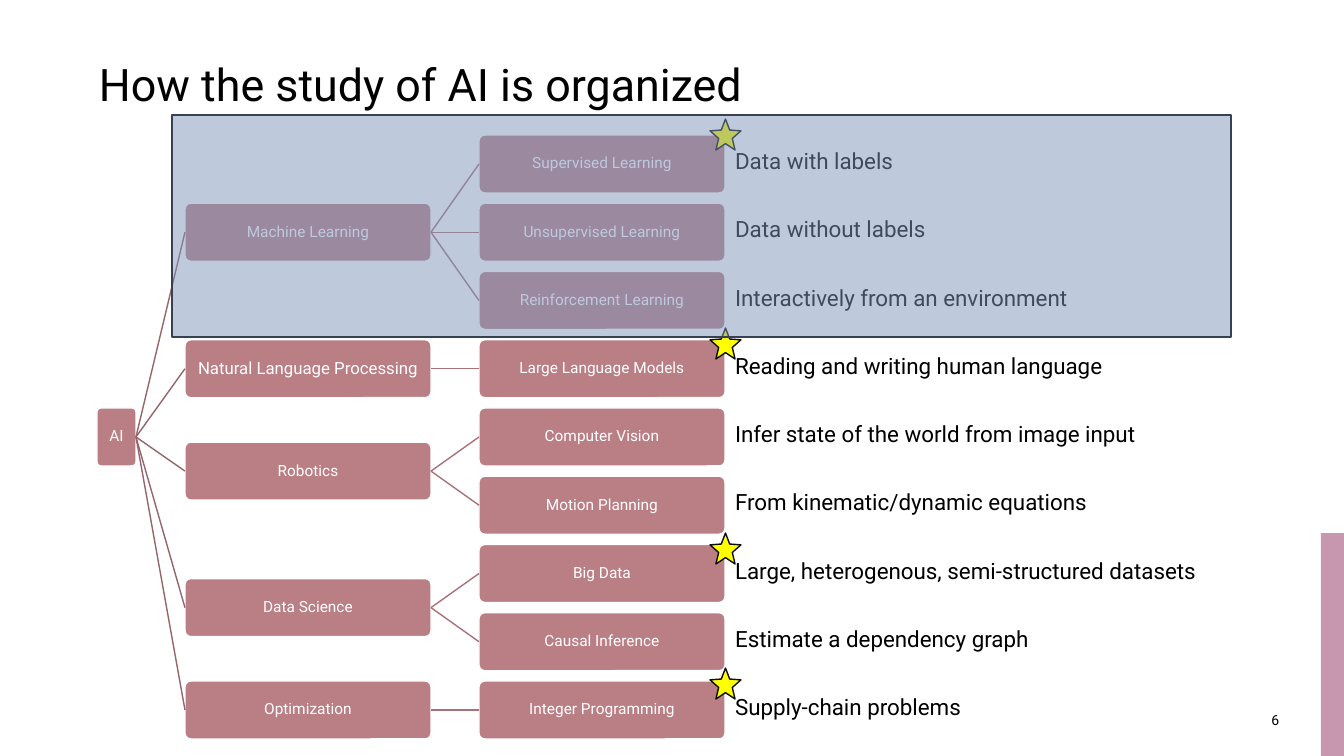
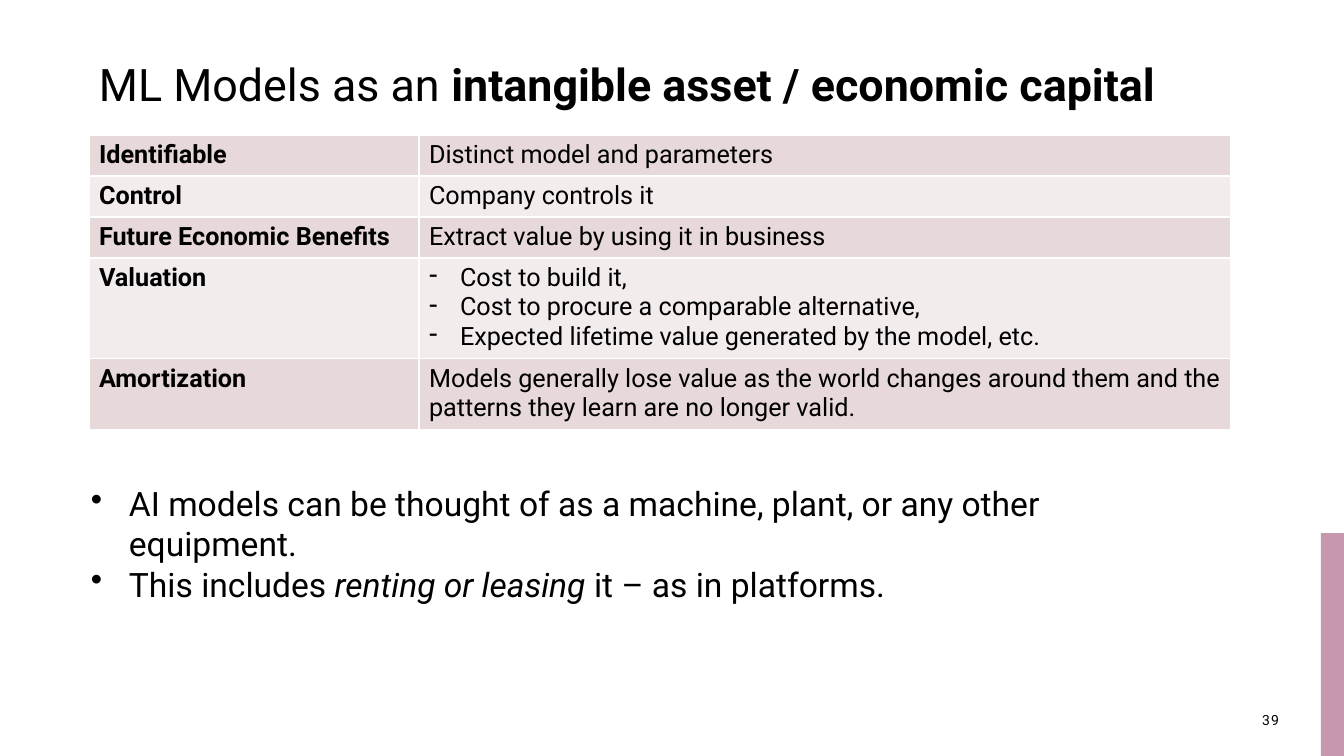
import pptx
import pptx.util
import pptx.dml.color
import pptx.enum.shapes
import pptx.enum.text
import pptx.oxml
import pptx.oxml.ns

Pt = pptx.util.Pt
RGBColor = pptx.dml.color.RGBColor
SHAPE = pptx.enum.shapes.MSO_SHAPE
ANCHOR = pptx.enum.text.MSO_ANCHOR
ALIGN = pptx.enum.text.PP_ALIGN
qn = pptx.oxml.ns.qn

BLACK = RGBColor(0x00, 0x00, 0x00)
WHITE = RGBColor(0xFF, 0xFF, 0xFF)
BAND = RGBColor(0xC7, 0x96, 0xAF)
NODE = RGBColor(0xBA, 0x7E, 0x85)
ROOT_EDGE = RGBColor(0x95, 0x65, 0x6B)
BRANCH_EDGE = RGBColor(0xA9, 0x72, 0x79)
STAR = RGBColor(0xFF, 0xFF, 0x00)
STAR_LINE = RGBColor(0x0D, 0x0D, 0x0D)
VEIL = RGBColor(0x7E, 0x94, 0xBA)
VEIL_LINE = RGBColor(0x37, 0x41, 0x52)
ROW_FILLS = [RGBColor(0xE7, 0xD8, 0xD9), RGBColor(0xF3, 0xEC, 0xED)]

FONT = "Roboto"
PX = 914400 / 100.8
PLAIN_TABLE = "{2D5ABB26-0587-4C30-8999-92F81FD0307C}"
BOLD = {"bold": True}
ITALIC = {"italic": True}

TREE = [
    ("Machine Learning", 11, [
        ("Supervised Learning", "Data with labels"),
        ("Unsupervised Learning", "Data without labels"),
        ("Reinforcement Learning", "Interactively from an environment"),
    ]),
    ("Natural Language Processing", 12, [
        ("Large Language Models", "Reading and writing human language"),
    ]),
    ("Robotics", 11, [
        ("Computer Vision", "Infer state of the world from image input"),
        ("Motion Planning", "From kinematic/dynamic equations"),
    ]),
    ("Data Science", 11, [
        ("Big Data", "Large, heterogenous, semi-structured datasets"),
        ("Causal Inference", "Estimate a dependency graph"),
    ]),
    ("Optimization", 11, [
        ("Integer Programming", "Supply-chain problems"),
    ]),
]
ROOT_X, ROOT_W = 97, 39
BRANCH_X, LEAF_X, NODE_W, NODE_H = 185, 479, 246, 58
FIRST_ROW, LAST_ROW = 164, 710
STAR_X, STAR_SIZE = 710, 31
STAR_TOPS = [119, 328, 533, 668]

ASSET_COLUMNS = [330, 812]
ASSET_ROWS = [
    ("Identifiable", ["Distinct model and parameters"], 41),
    ("Control", ["Company controls it"], 41),
    ("Future Economic Benefits", ["Extract value by using it in business"], 41),
    ("Valuation", [
        "Cost to build it,",
        "Cost to procure a comparable alternative,",
        "Expected lifetime value generated by the model, etc.",
    ], 98),
    ("Amortization", [
        "Models generally lose value as the world changes around them and the "
        "patterns they learn are no longer valid.",
    ], 70),
]
POINTS = [
    [("AI models can be thought of as a machine, plant, or any other equipment.", {})],
    [("This includes ", {}), ("renting or leasing", ITALIC), (" it – as in platforms.", {})],
]


def px(*values):
    return [round(v * PX) for v in values]


def apply(obj, formats):
    for name, value in formats.items():
        setattr(obj, name, value)


def write(p, runs, size, color=BLACK, **formats):
    apply(p, formats)
    for text, style in runs:
        r = p.add_run()
        r.text = text
        apply(r.font, {"name": FONT, "size": Pt(size), **style})
        r.font.color.rgb = color


def write_list(tf, items, size, bullet=None, indent=0):
    for i, runs in enumerate(items):
        p = tf.add_paragraph() if i else tf.paragraphs[0]
        if bullet:
            pPr = p._p.get_or_add_pPr()
            pPr.set("marL", str(px(indent)[0]))
            pPr.set("indent", str(px(-indent)[0]))
            pPr.append(pptx.oxml.parse_xml(
                f'<a:buChar {pptx.oxml.ns.nsdecls("a")} char="{bullet}"/>'))
        write(p, runs, size)


def add_text(s, box, anchor=ANCHOR.TOP):
    tf = s.shapes.add_textbox(*px(*box)).text_frame
    apply(tf, {"word_wrap": True, "vertical_anchor": anchor})
    return tf


def add_shape(s, kind, box, fill, line=None):
    sp = s.shapes.add_shape(kind, *px(*box))
    sp.shadow.inherit = False
    sp.fill.solid()
    sp.fill.fore_color.rgb = fill
    if line is None:
        sp.line.fill.background()
    else:
        sp.line.color.rgb = line
        sp.line.width = Pt(1)
    return sp


def add_slide(prs, title, number):
    s = prs.slides.add_slide(prs.slide_layouts[6])
    add_shape(s, SHAPE.RECTANGLE, (1321, 533, 23, 223), BAND)
    tf = add_text(s, (89, 40, 1142, 75), ANCHOR.BOTTOM)
    write(tf.paragraphs[0], title, 32, line_spacing=1.2)
    p = add_text(s, (1231, 700, 58, 40), ANCHOR.MIDDLE).paragraphs[0]
    write(p, [(str(number), {})], 10, alignment=ALIGN.RIGHT)
    p.runs[0]._r.get_or_add_rPr().set("spc", "100")
    return s


def add_node(s, text, x, middle, width=NODE_W, size=11):
    sp = add_shape(s, SHAPE.ROUNDED_RECTANGLE,
                   (x, middle - NODE_H / 2, width, NODE_H), NODE, WHITE)
    sp.adjustments[0] = 0.1
    tf = sp.text_frame
    margins = dict.fromkeys(
        ["margin_left", "margin_right", "margin_top", "margin_bottom"], px(1)[0])
    apply(tf, {"word_wrap": True, "vertical_anchor": ANCHOR.MIDDLE, **margins})
    write(tf.paragraphs[0], [(text, {})], size, WHITE,
          alignment=ALIGN.CENTER, line_spacing=0.9)
    return sp


def add_edge(s, parent, child, color):
    line = s.shapes.add_connector(
        pptx.enum.shapes.MSO_CONNECTOR.STRAIGHT, 0, 0, 0, 0)
    line.begin_connect(parent, 3)
    line.end_connect(child, 1)
    line.line.color.rgb = color
    line.line.width = Pt(1)
    line._element.spPr.append(pptx.oxml.parse_xml(
        f'<a:effectLst {pptx.oxml.ns.nsdecls("a")}/>'))


def add_table(s, left, top, widths, heights):
    frame = s.shapes.add_table(len(heights), len(widths),
                               *px(left, top, sum(widths), sum(heights)))
    table = frame.table
    apply(table, {"first_row": False, "horz_banding": False})
    for column, width in zip(table.columns, px(*widths)):
        column.width = width
    for row, height in zip(table.rows, px(*heights)):
        row.height = height
    return table


def build_tree(prs):
    s = add_slide(prs, [("How the study of AI is organized", {})], 6)
    notes = [note for _, _, leaves in TREE for _, note in leaves]
    pitch = (LAST_ROW - FIRST_ROW) / (len(notes) - 1)
    root = add_node(s, "AI", ROOT_X, (FIRST_ROW + LAST_ROW) / 2, ROOT_W)
    row = 0
    for name, size, leaves in TREE:
        middles = [FIRST_ROW + pitch * (row + i) for i in range(len(leaves))]
        row += len(leaves)
        branch = add_node(s, name, BRANCH_X, sum(middles) / len(middles), size=size)
        add_edge(s, root, branch, ROOT_EDGE)
        for (leaf, _), middle in zip(leaves, middles):
            add_edge(s, branch, add_node(s, leaf, LEAF_X, middle), BRANCH_EDGE)

    table = add_table(s, LEAF_X + NODE_W, 128, [506], [pitch] * len(notes))
    table._tbl.tblPr.find(qn("a:tableStyleId")).text = PLAIN_TABLE
    for i, note in enumerate(notes):
        cell = table.cell(i, 0)
        cell.fill.background()
        cell.vertical_anchor = ANCHOR.MIDDLE
        write(cell.text_frame.paragraphs[0], [(note, {})], 16)

    for top in STAR_TOPS:
        star = add_shape(s, SHAPE.STAR_5_POINT,
                         (STAR_X, top, STAR_SIZE, STAR_SIZE), STAR, STAR_LINE)
        star.adjustments[0] = 0.22
    veil = add_shape(s, SHAPE.RECTANGLE, (172, 115, 1059, 222), VEIL, VEIL_LINE)
    color = veil._element.spPr.find(qn("a:solidFill")).find(qn("a:srgbClr"))
    color.append(pptx.oxml.parse_xml(
        f'<a:alpha {pptx.oxml.ns.nsdecls("a")} val="50000"/>'))


def build_assets(prs):
    s = add_slide(prs, [("ML Models as an ", {}),
                        ("intangible asset / economic capital", BOLD)], 39)
    table = add_table(s, 89, 135, ASSET_COLUMNS, [h for _, _, h in ASSET_ROWS])
    for i, (label, lines, _) in enumerate(ASSET_ROWS):
        cells = [table.cell(i, j) for j in range(2)]
        for cell in cells:
            cell.fill.solid()
            cell.fill.fore_color.rgb = ROW_FILLS[i % 2]
        write_list(cells[0].text_frame, [[(label, BOLD)]], 18)
        bullet = "-" if len(lines) > 1 else None
        write_list(cells[1].text_frame, [[(line, {})] for line in lines], 18, bullet, 31)
    write_list(add_text(s, (81, 478, 1138, 132)), POINTS, 24, "•", 38)


def main():
    prs = pptx.Presentation()
    prs.slide_width, prs.slide_height = px(1344, 756)
    build_tree(prs)
    build_assets(prs)
    prs.save("out.pptx")


if __name__ == "__main__":
    main()
